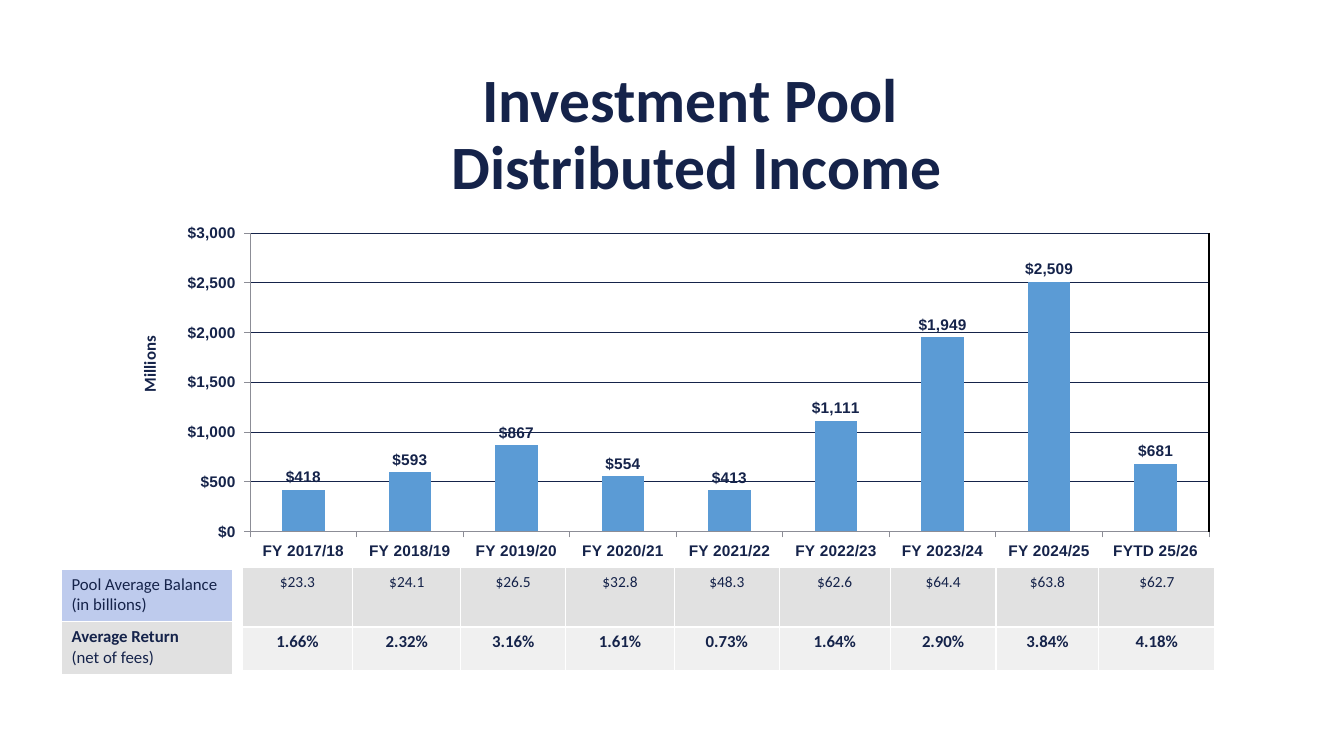
from lxml import etree
from pptx import Presentation
from pptx.chart.data import CategoryChartData
from pptx.dml.color import RGBColor
from pptx.enum.chart import XL_CHART_TYPE as CT, XL_LABEL_POSITION as LP, XL_TICK_MARK as TM
from pptx.enum.shapes import MSO_CONNECTOR
from pptx.enum.text import MSO_ANCHOR, MSO_AUTO_SIZE, PP_ALIGN
from pptx.oxml import parse_xml
from pptx.oxml.ns import nsdecls, qn
from pptx.util import Inches, Pt

COLORS = {"navy": "15234A", "bar": "5B9BD5", "axis": "8C8D96", "border": "FFFFFF",
          "lilac": "BECBED", "grey": "E1E1E1", "pale": "F0F0F0", "edge": "000000"}
RGB = {name: RGBColor.from_string(value) for name, value in COLORS.items()}

YEARS = [f"FY 20{y}/{y + 1}" for y in range(17, 25)] + ["FYTD 25/26"]
INCOME = [418, 593, 867, 554, 413, 1111, 1949, 2509, 681]
BALANCES = ["$23.3", "$24.1", "$26.5", "$32.8", "$48.3", "$62.6", "$64.4", "$63.8", "$62.7"]
RETURNS = ["1.66%", "2.32%", "3.16%", "1.61%", "0.73%", "1.64%", "2.90%", "3.84%", "4.18%"]
CHART_X, CHART_Y, CHART_W, CHART_H = 1.23, 1.88, 10.87, 3.75
PLOT_X, PLOT_Y, PLOT_W, PLOT_H = 0.115, 0.115, 0.875, 0.79


def set_font(font, size, name="Calibri", bold=False):
    font.size, font.name, font.bold = Pt(size), name, bold
    font.color.rgb = RGB["navy"]


def set_layout(parent, index, **values):
    """Place a chart part by shares of the chart's size."""
    for old in parent.findall(qn("c:layout")):
        parent.remove(old)
    layout = parse_xml(f'<c:layout {nsdecls("c")}><c:manualLayout/></c:layout>')
    for tag, value in values.items():
        etree.SubElement(layout[0], qn(f"c:{tag}")).set("val", str(value))
    parent.insert(index, layout)


prs = Presentation()
prs.slide_width, prs.slide_height = Inches(13.33), Inches(7.5)
s = prs.slides.add_slide(prs.slide_layouts[5])

# Title
title = s.shapes.title
title.left, title.top, title.width, title.height = map(Inches, (2.5, 0.81, 8.83, 1.25))
tf = title.text_frame
tf.text = "Investment Pool \vDistributed Income"
tf.auto_size, tf.word_wrap, tf.vertical_anchor = MSO_AUTO_SIZE.NONE, True, MSO_ANCHOR.BOTTOM
p = tf.paragraphs[0]
p.alignment, p.line_spacing = PP_ALIGN.CENTER, 0.9
set_font(p.font, 44, bold=True)

# Income chart
data = CategoryChartData()
data.categories = YEARS
data.add_series("Series 1", INCOME)
chart = s.shapes.add_chart(CT.COLUMN_CLUSTERED, Inches(CHART_X), Inches(CHART_Y),
                           Inches(CHART_W), Inches(CHART_H), data).chart
chart.has_legend = chart.has_title = False
set_font(chart.font, 18)
cat_axis, val_axis = chart.category_axis, chart.value_axis
for axis in (cat_axis, val_axis):
    set_font(axis.tick_labels.font, 11, "Arial", True)
    axis.major_tick_mark = TM.OUTSIDE
    axis.format.line.color.rgb = RGB["axis"]
    axis.format.line.width = Pt(0.5)
val_axis.minimum_scale, val_axis.maximum_scale, val_axis.major_unit = 0, 3000, 500
val_axis.tick_labels.number_format = '"$"#,##0_);[Red]\\("$"#,##0\\)'
val_axis.tick_labels.number_format_is_linked = False
grid = val_axis.major_gridlines.format.line
grid.color.rgb, grid.width = RGB["navy"], Pt(0.5)
axis_title = val_axis.axis_title
axis_title.text_frame.text = "Millions"
axis_title.text_frame._txBody.bodyPr.set("rot", "-5400000")
axis_title.text_frame._txBody.bodyPr.set("vert", "horz")
set_font(axis_title.text_frame.paragraphs[0].font, 12, bold=True)
set_layout(axis_title._element, 1, xMode="edge", yMode="edge", x=0.01, y=0.38)

plot = chart.plots[0]
plot.gap_width, plot.vary_by_categories = 150, False
bars = plot.series[0].format.fill
bars.solid()
bars.fore_color.rgb = RGB["bar"]
plot.has_data_labels = True
labels = plot.data_labels
labels.show_value, labels.position = True, LP.OUTSIDE_END
labels.number_format, labels.number_format_is_linked = '"$"#,##0', False
set_font(labels.font, 11, "Arial", True)
set_layout(chart._chartSpace.chart.plotArea, 0, layoutTarget="inner", xMode="edge",
           yMode="edge", x=PLOT_X, y=PLOT_Y, w=PLOT_W, h=PLOT_H)

# Right edge of the plot
edge_x = Inches(CHART_X + CHART_W * (PLOT_X + PLOT_W))
edge_y = CHART_Y + CHART_H * PLOT_Y
edge = s.shapes.add_connector(MSO_CONNECTOR.STRAIGHT, edge_x, Inches(edge_y),
                              edge_x, Inches(edge_y + CHART_H * PLOT_H))
edge.line.color.rgb, edge.line.width = RGB["edge"], Pt(1.5)
etree.SubElement(edge._element.spPr, qn("a:effectLst"))

# Tables: position, column widths, row heights, alignment, then
# rows as (fill, cells), each cell a list of (text, size, bold) lines
TABLES = [
    (0.61, 5.65, [1.7], [0.52, 0.52], PP_ALIGN.LEFT, [
        ("lilac", [[("Pool Average Balance", 12, False), ("(in billions)", 12, False)]]),
        ("grey", [[("Average Return", 12, True), ("(net of fees)", 12, False)]])]),
    (2.4, 5.63, [1.1, 1.07, 1.04, 1.08, 1.04, 1.1, 1.05, 1.02, 1.15], [0.59, 0.43],
     PP_ALIGN.CENTER, [
        ("grey", [[(t, 11, False)] for t in BALANCES]),
        ("pale", [[(t, 12, True)] for t in RETURNS])]),
]
for x, y, widths, heights, align, rows in TABLES:
    table = s.shapes.add_table(len(heights), len(widths), Inches(x), Inches(y),
                               Inches(sum(widths)), Inches(sum(heights))).table
    for column, width in zip(table.columns, widths):
        column.width = Inches(width)
    for r, (fill, cells) in enumerate(rows):
        table.rows[r].height = Inches(heights[r])
        for c, lines in enumerate(cells):
            cell = table.cell(r, c)
            cell.text = "\n".join(text for text, size, bold in lines)
            for p, (text, size, bold) in zip(cell.text_frame.paragraphs, lines):
                p.alignment = align
                set_font(p.font, size, bold=bold)
            tcPr = cell._tc.get_or_add_tcPr()
            for side in ("lnL", "lnR", "lnT", "lnB"):
                tcPr.append(parse_xml(
                    f'<a:{side} {nsdecls("a")} w="12700"><a:solidFill>'
                    f'<a:srgbClr val="{COLORS["border"]}"/></a:solidFill></a:{side}>'))
            cell.fill.solid()
            cell.fill.fore_color.rgb = RGB[fill]

prs.save("out.pptx")
